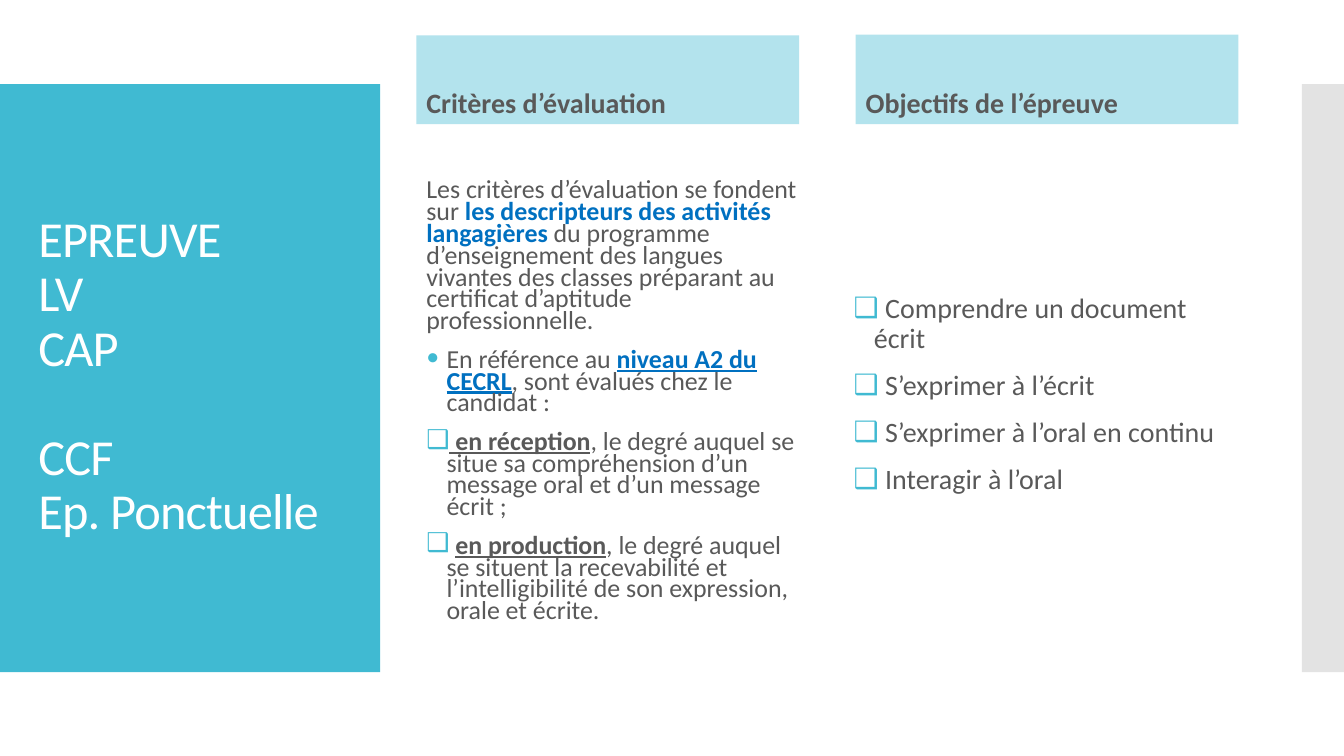
from dataclasses import dataclass
from lxml.etree import SubElement as Sub
from pptx import Presentation
from pptx.dml.color import RGBColor as Rgb
from pptx.enum.shapes import MSO_SHAPE as Kind
from pptx.enum.text import MSO_ANCHOR as Anchor, MSO_AUTO_SIZE as Auto, PP_ALIGN as Align
from pptx.oxml.ns import qn
from pptx.util import Cm, Pt


@dataclass(frozen=True)
class Theme:
    """Colours, font and type sizes of the slide."""
    font: str = "Calibri"
    teal: str = "40BAD2"
    pale: str = "B3E3ED"
    grey: str = "C8C8C8"
    ink: str = "595959"
    blue: str = "0070C0"
    white: str = "FFFFFF"
    title: float = 36
    head: float = 20
    left: float = 18.5
    right: float = 20


LOOK = Theme()
BOX = "❑"
TITLE = ["EPREUVE \vLV\vCAP", "CCF\vEp. Ponctuelle"]
CRITERIA = [
    ("", [("Les critères d’évaluation se fondent sur ", ""),
          ("les descripteurs des activités langagières ", "bc"),
          ("du programme d’enseignement des langues vivantes des classes "
           "préparant au certificat d’aptitude professionnelle.", "")]),
    ("•", [("En référence au ", ""), ("niveau A2 du CECRL", "bcu"),
           (", sont évalués chez le candidat :", "")]),
    (BOX, [(" en réception", "bu"),
           (", le degré auquel se situe sa compréhension d’un message oral "
            "et d’un message écrit ;", "")]),
    (BOX, [(" ", ""), ("en production", "bu"),
           (", le degré auquel se situent la recevabilité et "
            "l’intelligibilité de son expression, orale et écrite.", "")]),
]
GOALS = [(BOX, [(text, "")]) for text in (
    " Comprendre un document écrit", " S’exprimer à l’écrit",
    " S’exprimer à l’oral en continu", " Interagir à l’oral")]


def place(shape, area, anchor):
    """Move a placeholder and fix its text frame."""
    shape.left, shape.top, shape.width, shape.height = map(Cm, area)
    frame = shape.text_frame
    frame.word_wrap = True
    frame.auto_size = Auto.NONE
    frame.vertical_anchor = anchor
    return frame


def style(run, size, color, bold=False, line=False):
    """Format one run."""
    font = run.font
    font.name, font.size = LOOK.font, Pt(size)
    font.bold, font.underline = bold, line
    font.color.rgb = Rgb.from_string(color)


def panel(slide, area, color, alpha=100):
    """Add a plain panel behind the text."""
    shape = slide.shapes.add_shape(Kind.RECTANGLE, *map(Cm, area))
    shape.shadow.inherit = False
    shape.line.fill.background()
    shape.fill.solid()
    shape.fill.fore_color.rgb = Rgb.from_string(color)
    if alpha < 100:
        tint = next(shape.element.iter(qn("a:srgbClr")))
        Sub(tint, qn("a:alpha"), val=str(alpha * 1000))
    slide.shapes.element.insert(2, shape.element)


def heading(shape, area):
    """Set the slide title in two groups of lines."""
    frame = place(shape, area, Anchor.MIDDLE)
    frame.text = "\n".join(TITLE)
    for para in frame.paragraphs:
        para.alignment = Align.LEFT
        para.line_spacing = 0.9
        for run in para.runs:
            style(run, LOOK.title, LOOK.white)
            run.font._element.set("spc", "-60")
    frame.paragraphs[1].space_before = Pt(39)


def label(shape, area, text):
    """Set a filled column header."""
    frame = place(shape, area, Anchor.BOTTOM)
    shape.fill.solid()
    shape.fill.fore_color.rgb = Rgb.from_string(LOOK.pale)
    frame.text = text
    para = frame.paragraphs[0]
    para.line_spacing = 0.9
    para.space_before = Pt(0)
    style(para.runs[0], LOOK.head, LOOK.ink, True)


def bullet(para, mark):
    """Give a paragraph its mark and hanging indent, or neither."""
    props = para._p.get_or_add_pPr()
    step = Cm(0.51) if mark else 0
    props.set("marL", str(step))
    props.set("indent", str(-step))
    if not mark:
        Sub(props, qn("a:buNone"))
        return
    Sub(Sub(props, qn("a:buClr")), qn("a:srgbClr"), val=LOOK.teal)
    Sub(props, qn("a:buFont"), typeface=LOOK.font)
    Sub(props, qn("a:buChar"), char=mark)


def column(shape, area, items, size, pitch):
    """Fill a column with marked paragraphs."""
    frame = place(shape, area, Anchor.MIDDLE)
    for num, (mark, parts) in enumerate(items):
        para = frame.add_paragraph() if num else frame.paragraphs[0]
        para.line_spacing = pitch
        para.space_before = Pt(12)
        bullet(para, mark)
        for text, flags in parts:
            run = para.add_run()
            run.text = text
            color = LOOK.blue if "c" in flags else LOOK.ink
            style(run, size, color, "b" in flags, "u" in flags)
    return frame


def main():
    """Build the slide and save it."""
    deck = Presentation()
    deck.slide_width, deck.slide_height = Cm(33.87), Cm(19.05)
    slide = deck.slides.add_slide(deck.slide_layouts[4])
    title, head, body, goal, list_ = slide.placeholders
    panel(slide, (32.81, 2.12, 1.06, 14.82), LOOK.grey, 50)
    panel(slide, (0, 2.12, 9.58, 14.82), LOOK.teal)
    heading(title, (0.71, 3.12, 8.18, 12.78))
    label(head, (10.49, 0.89, 9.65, 2.24), "Critères d’évaluation")
    column(body, (10.49, 3.76, 9.91, 12.78), CRITERIA, LOOK.left, 0.7)
    label(goal, (21.56, 0.87, 9.65, 2.26), "Objectifs de l’épreuve")
    frame = column(list_, (21.26, 4.52, 10.11, 12.07), GOALS, LOOK.right, 0.9)
    frame.margin_bottom = Cm(1.32)
    deck.save("out.pptx")


if __name__ == "__main__":
    main()
